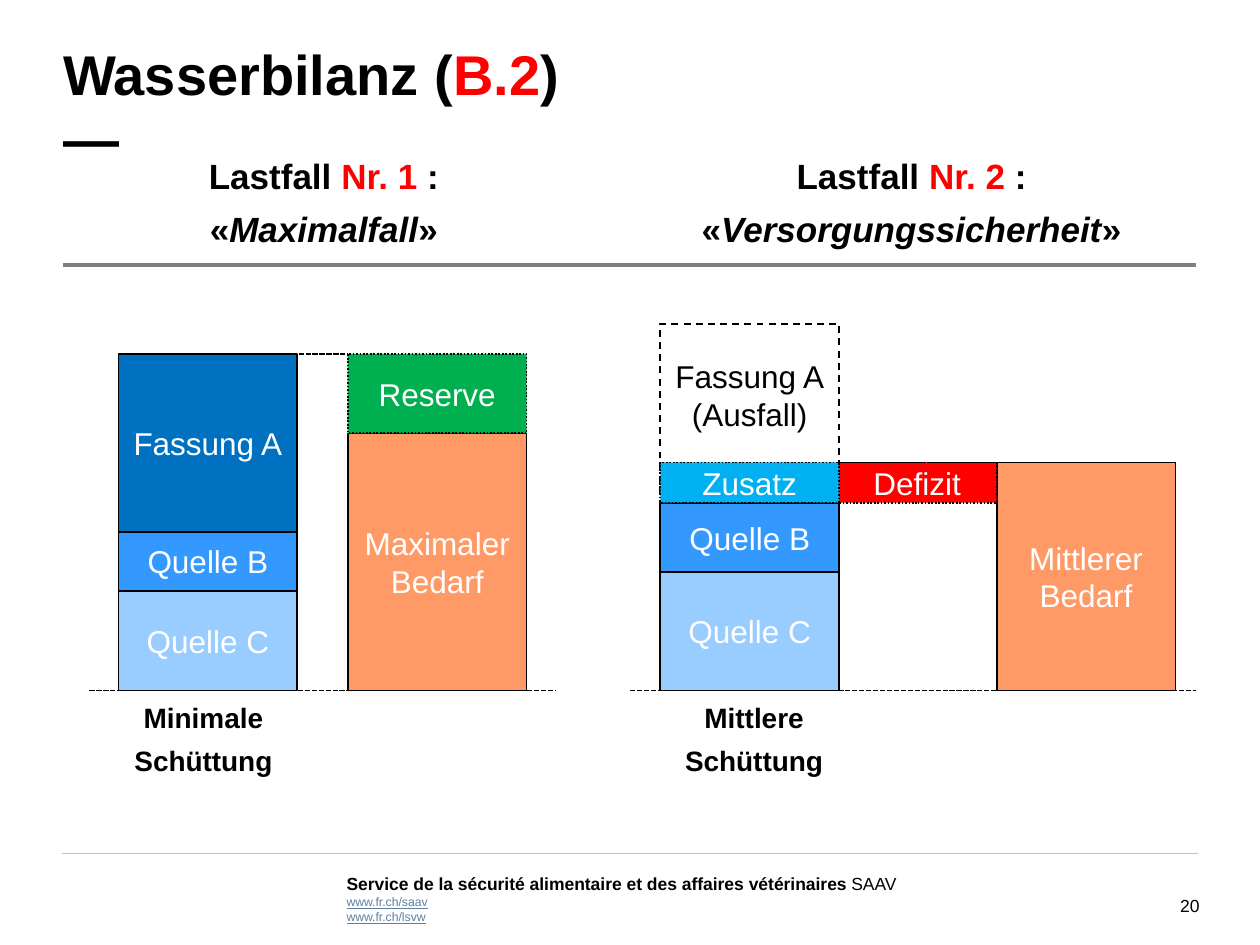
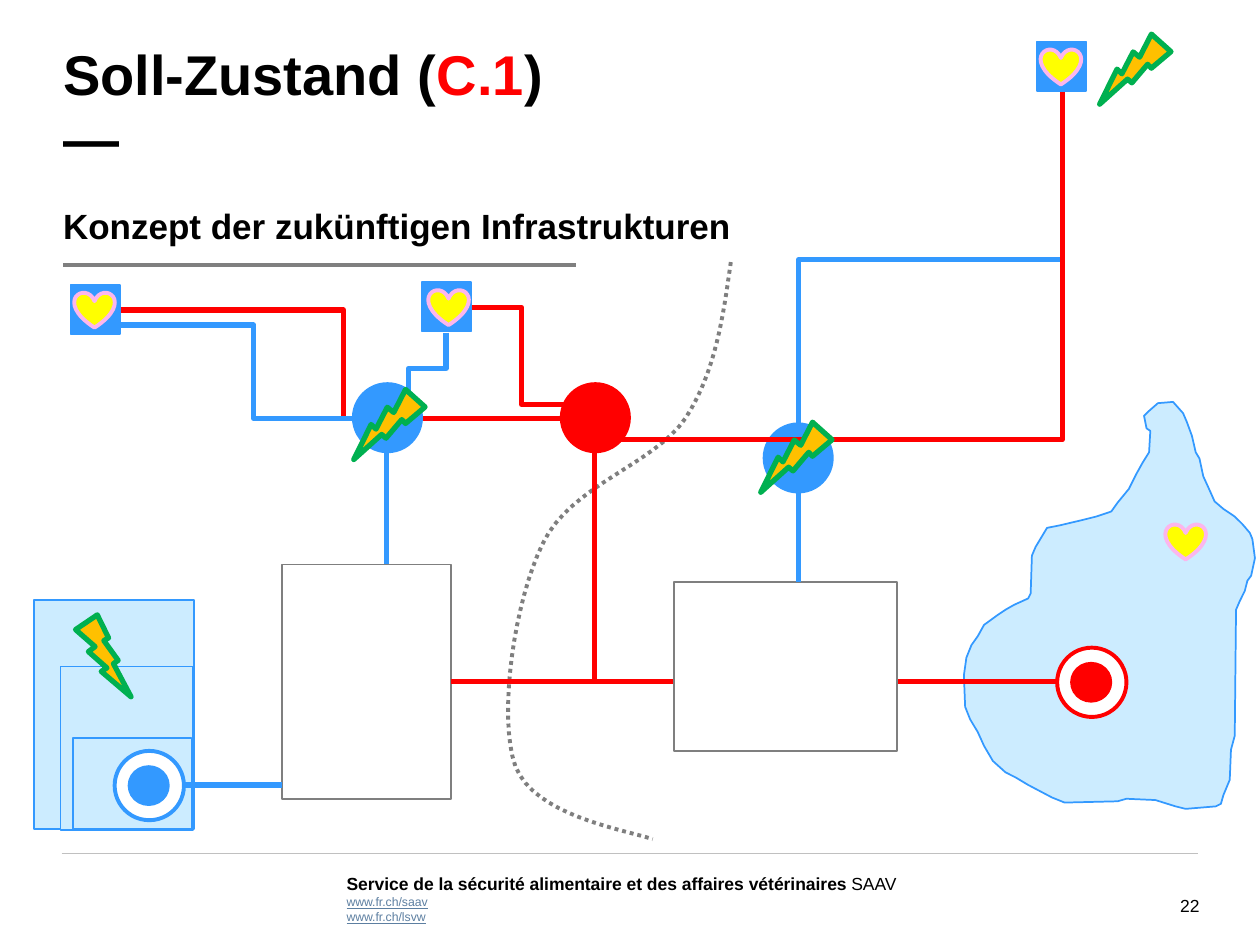
from lxml.etree import SubElement
from pptx import Presentation
from pptx.dml.color import RGBColor
from pptx.enum.dml import MSO_LINE
from pptx.enum.shapes import MSO_CONNECTOR, MSO_SHAPE
from pptx.enum.text import MSO_ANCHOR, MSO_AUTO_SIZE, PP_ALIGN
from pptx.oxml.ns import qn
from pptx.util import Inches, Pt

BLACK, WHITE, GREY, RED, BLUE = "000000", "FFFFFF", "7F7F7F", "FF0000", "3399FF"
PALE, SKY, PEACH = "CCECFF", "99CCFF", "FF9966"
DOT, DASH, LONG = MSO_LINE.ROUND_DOT, MSO_LINE.SQUARE_DOT, MSO_LINE.DASH
MID = {"alignment": PP_ALIGN.CENTER}
LEFT = {"alignment": PP_ALIGN.LEFT}
TITLE = {"size": Pt(32), "bold": True}
HEAD = {"size": Pt(20), "bold": True}
NOTE = {"size": Pt(16), "bold": True}
LABEL = {"size": Pt(18)}
SMALL = {"size": Pt(10)}
SITE = {"size": Pt(7), "underline": True, "color": "5D7FA1"}
HOT = {"color": RED}
HEADGAP = {"line_spacing": Pt(24), "space_after": Pt(6)}
NOTEGAP = {"line_spacing": Pt(19), "space_after": Pt(6)}

OFFICE = [[("Service de la sécurité alimentaire et des affaires vétérinaires ", {"bold": True}),
           ("SAAV", {})]]
SITES = [[("www.fr.ch/saav", SITE)], [("www.fr.ch/lsvw", SITE)]]

CASES = [
    ("1", "Maximalfall", (0.28, 1.23, 4.58, 0.76)),
    ("2", "Versorgungssicherheit", (4.83, 1.23, 4.81, 0.76)),
]
BASE, WIDE = 5.48, 1.42
# Each column: left, width, base, then its blocks from the bottom up
COLUMNS = [
    (0.94, WIDE, BASE, [("Quelle C", 0.79, SKY, None), ("Quelle B", 0.47, BLUE, None),
                        ("Fassung A", 1.41, "0070C0", None)]),
    (2.76, WIDE, BASE, [("Maximaler Bedarf", 2.04, PEACH, None),
                        ("Reserve", 0.63, "00B050", DOT)]),
    (5.24, WIDE, BASE, [("Quelle C", 0.94, SKY, None), ("Quelle B", 0.55, BLUE, None)]),
    (7.91, WIDE, BASE, [("Mittlerer Bedarf", 1.81, PEACH, None)]),
    (5.24, WIDE, 3.99, [("Fassung A\n(Ausfall)", 1.42, None, LONG)]),
    (6.65, 1.26, 3.99, [("Defizit", 0.32, RED, DOT)]),
    (5.24, WIDE, 3.99, [("Zusatz", 0.32, "00B0F0", DOT)]),
]
LEVELS = [(0.71, BASE, 4.41, BASE), (5, BASE, 9.49, BASE),
          (2.37, 2.81, 2.76, 2.81), (6.65, 3.67, 7.91, 3.67)]
YIELDS = [("Minimale", 1.06), ("Mittlere", 5.43)]

# Each style: preset, width, height, fill, line, weight
STYLES = {
    "field": (MSO_SHAPE.RECTANGLE, 0, 0, PALE, BLUE, 1),
    "zone": (MSO_SHAPE.RECTANGLE, 0, 0, None, GREY, 1),
    "tank": (MSO_SHAPE.RECTANGLE, 0.39, 0.39, BLUE, BLUE, 1),
    "pump": (MSO_SHAPE.OVAL, 0.55, 0.55, BLUE, BLUE, 1),
    "hub": (MSO_SHAPE.OVAL, 0.55, 0.55, RED, RED, 1),
    "ring": (MSO_SHAPE.DONUT, 0.55, 0.55, WHITE, BLUE, 2.25),
    "core": (MSO_SHAPE.OVAL, 0.32, 0.31, BLUE, BLUE, 1),
    "hot ring": (MSO_SHAPE.DONUT, 0.55, 0.55, WHITE, RED, 2.25),
    "hot core": (MSO_SHAPE.OVAL, 0.32, 0.31, RED, RED, 1),
    "bolt": (MSO_SHAPE.LIGHTNING_BOLT, 0.44, 0.65, "FFC000", "00B050", 3),
    "heart": (MSO_SHAPE.HEART, 0.32, 0.28, "FFFF00", "FCB6ED", 2.25),
}
BACK = [
    ("across", RED, 0.73, 2.46, 4.72, 3.32),
    ("across", RED, 3.56, 2.44, 4.72, 3.21),
    ("field", 0.27, 4.76, 1.27, 1.82),
    ("field", 0.48, 5.29, 1.05, 1.3),
    ("field", 0.58, 5.86, 0.94, 0.72),
    ("tank", 0.56, 2.26),
    ("across", BLUE, 0.96, 2.58, 3.07, 3.32),
    ("pump", 2.8, 3.04),
    ("line", BLUE, 3.07, 3.59, 3.07, 4.48),
    ("tank", 3.35, 2.24),
    ("down", BLUE, 3.54, 2.64, 3.24, 3.48, 0.34),
    ("ring", 0.91, 5.96),
    ("core", 1.02, 6.08),
    ("line", BLUE, 1.46, 6.23, 2.24, 6.23),
]
FRONT = [
    ("tank", 8.23, 0.33),
    ("down", BLUE, 8.43, 0.53, 6.34, 3.59),
    ("zone", 5.35, 4.62, 1.77, 1.34),
    ("pump", 6.06, 3.36),
    ("line", BLUE, 6.34, 3.73, 6.34, 4.62),
    ("hub", 4.45, 3.04),
    ("line", RED, 4.72, 5.41, 4.72, 3.32),
    ("line", RED, 7.13, 5.41, 8.43, 5.41),
    ("hot ring", 8.39, 5.14),
    ("hot core", 8.5, 5.26),
    ("corner", RED, 8.43, 0.73, 4.89, 3.49),
    ("bolt", 0.6, 4.88),
    ("heart", 0.59, 2.32),
    ("heart", 3.4, 2.3),
    ("heart", 9.25, 4.16),
    ("heart", 8.26, 0.39),
]
TURNED = [(2.85, 3.03), (8.77, 0.21), (6.08, 3.29)]
LAKE = [
    (9.13, 3.42), (9.12, 3.59), (9.07, 3.67), (9.02, 3.76), (8.98, 3.84), (8.96, 3.88),
    (8.87, 3.99), (8.82, 4.06), (8.7, 4.1), (8.58, 4.13), (8.41, 4.17), (8.31, 4.19),
    (8.22, 4.34), (8.19, 4.41), (8.18, 4.71), (8.16, 4.75), (8.05, 4.8), (7.98, 4.84),
    (7.92, 4.88), (7.81, 4.96), (7.76, 5.05), (7.71, 5.12), (7.67, 5.22), (7.65, 5.36),
    (7.66, 5.61), (7.7, 5.71), (7.76, 5.81), (7.81, 5.92), (7.88, 6.04), (7.98, 6.13),
    (8.06, 6.17), (8.16, 6.23), (8.35, 6.33), (8.45, 6.37), (8.87, 6.36), (8.94, 6.34),
    (9.17, 6.35), (9.33, 6.4), (9.41, 6.42), (9.65, 6.4), (9.69, 6.38), (9.71, 6.31),
    (9.76, 6.19), (9.77, 5.95), (9.8, 5.84), (9.81, 4.84), (9.84, 4.77), (9.88, 4.69),
    (9.9, 4.61), (9.93, 4.57), (9.96, 4.43), (9.94, 4.28), (9.92, 4.23), (9.86, 4.16),
    (9.8, 4.1), (9.71, 4.04), (9.64, 3.98), (9.6, 3.89), (9.55, 3.78), (9.52, 3.64),
    (9.49, 3.59), (9.46, 3.46), (9.42, 3.35), (9.39, 3.28), (9.31, 3.19), (9.19, 3.2),
    (9.11, 3.27), (9.08, 3.3), (9.1, 3.4),
]
BORDER = [
    ((5.8, 2.08), (5.74, 2.51), (5.68, 2.95), (5.44, 3.32)),
    ((5.44, 3.32), (5.19, 3.69), (4.53, 3.85), (4.31, 4.31)),
    ((4.31, 4.31), (4.08, 4.77), (3.95, 5.69), (4.09, 6.08)),
    ((4.09, 6.08), (4.24, 6.47), (4.93, 6.58), (5.18, 6.66)),
]


def put(obj, vals):
    """Set each format value on an object."""
    for key, val in vals.items():
        if key == "color":
            obj.color.rgb = RGBColor.from_string(val)
        else:
            setattr(obj, key, val)


def paint(shape, fill, line, weight, dash=None):
    """Give a shape its fill and outline."""
    shape.shadow.inherit = False
    if fill:
        shape.fill.solid()
        shape.fill.fore_color.rgb = RGBColor.from_string(fill)
    else:
        shape.fill.background()
    put(shape.line, {"color": line, "width": Pt(weight), "dash_style": dash})


def write(shape, paras, font, para, wrap=True):
    """Fill a shape with paragraphs of formatted runs."""
    frame = shape.text_frame
    put(frame, {"word_wrap": wrap, "auto_size": MSO_AUTO_SIZE.NONE,
                "vertical_anchor": MSO_ANCHOR.TOP, "margin_left": 0,
                "margin_right": 0, "margin_top": 0, "margin_bottom": 0})
    for num, runs in enumerate(paras):
        item = frame.add_paragraph() if num else frame.paragraphs[0]
        props = item._p.get_or_add_pPr()
        put(props, {"marL": 0, "indent": 0})
        SubElement(props, qn("a:buNone"))
        put(item, {"space_before": Pt(0), **para})
        for text, more in runs:
            if text == "\n":
                item.add_line_break()
                continue
            run = item.add_run()
            run.text = text
            put(run.font, {"name": "Arial", "color": BLACK, **font, **more})


def place(shape, box):
    """Move a placeholder to a box."""
    put(shape, dict(zip(("left", "top", "width", "height"), map(Inches, box))))
    return shape


def text(slide, box, *args):
    """Add a text box."""
    write(slide.shapes.add_textbox(*map(Inches, box)), *args)


def link(slide, ends, color, weight, dash=None, kind=MSO_CONNECTOR.STRAIGHT):
    """Add a connector between two points."""
    line = slide.shapes.add_connector(kind, *map(Inches, ends))
    put(line.line, {"color": color, "width": Pt(weight), "dash_style": dash})
    SubElement(line._element.spPr, qn("a:effectLst"))
    return line


def pipe(slide, kind, color, x1, y1, x2, y2, bend=None):
    """Add a straight or bent pipe; all but "across" leave downwards."""
    if kind == "line":
        return link(slide, (x1, y1, x2, y2), color, 3)
    ends = (x1, y1, x2, y2)
    if kind != "across":
        long, wide = (y2 - y1) / 2, (x1 - x2) / 2
        cx, cy = (x1 + x2) / 2, (y1 + y2) / 2
        ends = (cx - long, cy - wide, cx + long, cy + wide)
    line = link(slide, ends, color, 3, kind=MSO_CONNECTOR.ELBOW)
    props = line._element.spPr
    shape = props.find(qn("a:prstGeom"))
    if kind != "across":
        props.find(qn("a:xfrm")).set("rot", "5400000")
    if kind == "corner":
        shape.set("prst", "bentConnector2")
    if bend:
        SubElement(shape.find(qn("a:avLst")), qn("a:gd"), name="adj1",
                   fmla=f"val {round(bend * 100000)}")
    if color == BLUE:
        SubElement(props.find(qn("a:ln")), qn("a:tailEnd"), type="arrow")
    return line


def mark(slide, style, left, top, wide=0, high=0):
    """Add a shape in a named style."""
    form, w, h, *look = STYLES[style]
    shape = slide.shapes.add_shape(form, *map(Inches, (left, top, wide or w, high or h)))
    paint(shape, *look)
    return shape


def draw(slide, parts):
    """Add marks and pipes in order."""
    for name, *rest in parts:
        if name in STYLES:
            mark(slide, name, *rest)
        else:
            pipe(slide, name, *rest)


def trace(slide, points, close):
    """Add a freeform through points."""
    spots = [(Inches(x), Inches(y)) for x, y in points]
    pen = slide.shapes.build_freeform(*spots[0], scale=1.0)
    pen.add_line_segments(spots[1:], close=close)
    return pen.convert_to_shape()


def curve(a, b, c, d, steps=16):
    """Return points along a cubic curve."""
    return [tuple((1 - t) ** 3 * p + 3 * (1 - t) ** 2 * t * q + 3 * (1 - t) * t * t * r + t ** 3 * s
                  for p, q, r, s in zip(a, b, c, d))
            for t in (n / steps for n in range(steps + 1))]


def start(deck, layout, name, code, page, wide):
    """Add a slide with title, rule and footer."""
    slide = deck.slides.add_slide(deck.slide_layouts[layout])
    runs = [(name + " (", {}), (code, HOT), (")", {}), ("\n", {}), ("—", {})]
    write(place(slide.shapes.title, (0.5, 0.33, wide, 1.04)), [runs], TITLE,
          {"line_spacing": Pt(37), **LEFT})
    text(slide, (9.08, 7.1, 0.44, 0.17), [[(page, {})]], SMALL, {"alignment": PP_ALIGN.RIGHT})
    text(slide, (2.75, 6.91, 5.25, 0.19), OFFICE, SMALL, {"line_spacing": Pt(13.4)})
    text(slide, (2.75, 7.1, 5.25, 0.3), SITES, {}, {})
    link(slide, (0.49, 6.77, 9.51, 6.77), "C0C0C0", 0.25)
    link(slide, (0.5, 2.1, 4.57, 2.1), GREY, 2.25)
    return slide


def balance(deck):
    """Build the water balance slide."""
    slide = start(deck, 3, "Wasserbilanz", "B.2", "20", 9.01)
    for spot, (num, name, box) in enumerate(CASES, 1):
        paras = [[("Lastfall ", {}), (f"Nr. {num} ", HOT), (":", {})],
                 [("«", {}), (name, {"italic": True}), ("»", {})]]
        write(place(slide.placeholders[spot], box), paras, HEAD, {**HEADGAP, **MID})
    link(slide, (4.57, 2.1, 9.49, 2.1), GREY, 2.25)
    for left, wide, top, stack in COLUMNS:
        for name, high, fill, dash in stack:
            top -= high
            box = slide.shapes.add_shape(MSO_SHAPE.RECTANGLE,
                                         *map(Inches, (left, top, wide, high)))
            paint(box, fill, BLACK, 1, dash)
            box.text_frame.text = name
            if not fill:
                box.text_frame.margin_bottom = Inches(0.34)
            for item in box.text_frame.paragraphs:
                put(item, MID)
                put(item.font, {"name": "Arial", "color": WHITE if fill else BLACK, **LABEL})
    for ends in LEVELS:
        link(slide, ends, BLACK, 1, DASH)
    for name, left in YIELDS:
        text(slide, (left, 5.56, 1.11, 0.62), [[(name, {})], [("Schüttung", {})]],
             NOTE, {**NOTEGAP, **MID}, False)


def target(deck):
    """Build the target network slide."""
    slide = start(deck, 1, "Soll-Zustand", "C.1", "22", 5.84)
    write(place(slide.placeholders[1], (0.5, 1.62, 7.15, 0.34)),
          [[("Konzept der zukünftigen Infrastrukturen", {})]], HEAD, {**HEADGAP, **LEFT})
    paint(trace(slide, LAKE, True), PALE, BLUE, 1)
    zone = mark(slide, "zone", 2.24, 4.48, 1.34, 1.86)
    draw(slide, BACK)
    points = [spot for part in BORDER for spot in curve(*part)]
    paint(trace(slide, points, False), None, GREY, 2.25, DOT)
    pipe(slide, "line", RED, 3.58, 5.41, 5.35, 5.41).begin_connect(zone, 3)
    draw(slide, FRONT)
    for spot in TURNED:
        mark(slide, "bolt", *spot).rotation = 76


def main():
    """Build and save the deck."""
    deck = Presentation()
    put(deck, {"slide_width": Inches(10), "slide_height": Inches(7.5)})
    balance(deck)
    target(deck)
    deck.save("out.pptx")


if __name__ == "__main__":
    main()
